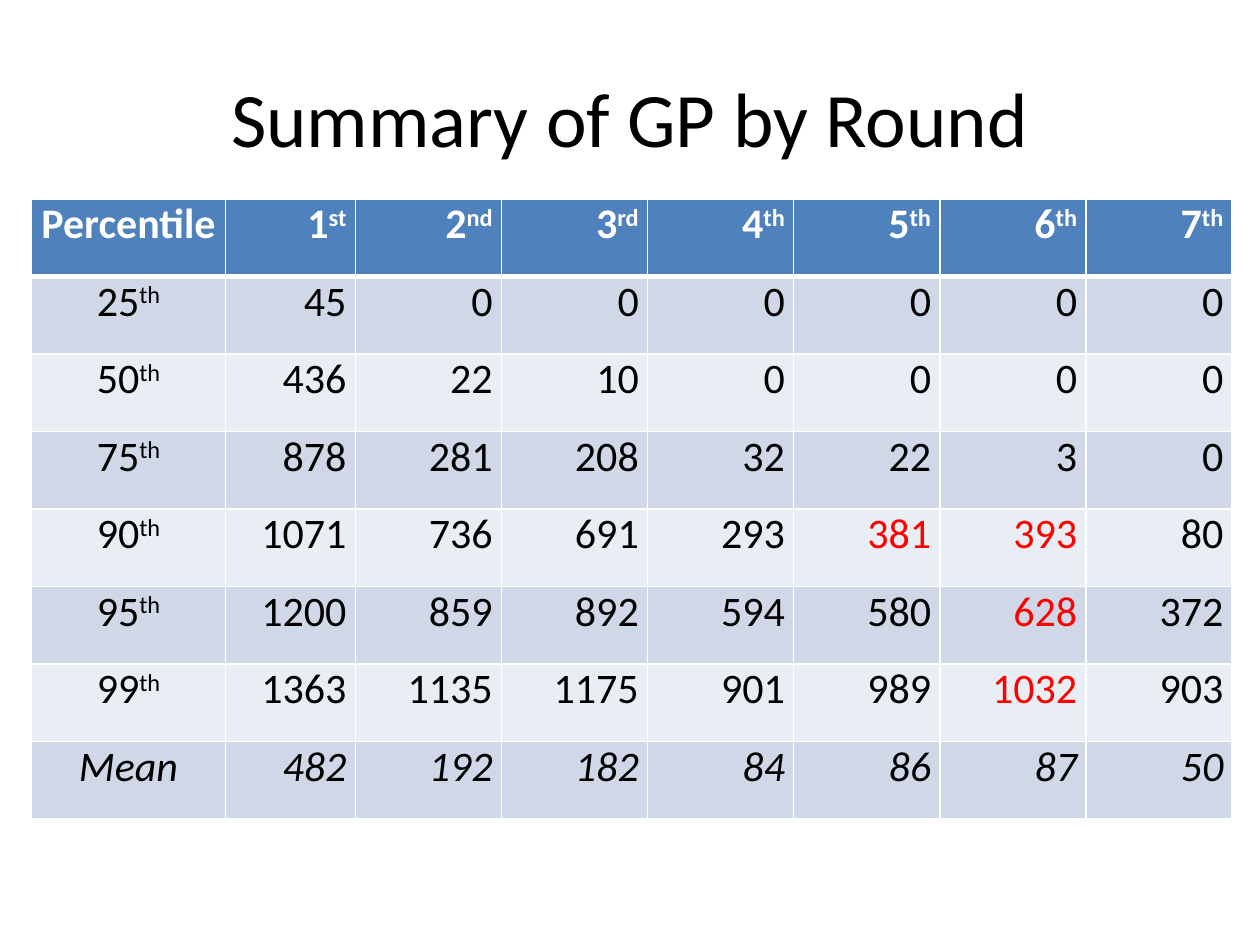
"""Build the slide that summarises GP by round in a percentile table."""
from lxml import etree
from pptx import Presentation
from pptx.dml.color import RGBColor
from pptx.enum.text import MSO_ANCHOR, PP_ALIGN
from pptx.oxml.ns import qn
from pptx.util import Inches, Pt

CENTER, RIGHT = PP_ALIGN.CENTER, PP_ALIGN.RIGHT
TOP, MIDDLE = MSO_ANCHOR.TOP, MSO_ANCHOR.MIDDLE
TITLE_ONLY = 5
COLORS = {
    "text": "000000", "white": "FFFFFF", "header": "4F81BD",
    "dark_band": "D0D8E8", "light_band": "E9EDF4", "highlight": "FF0000",
}
COLUMN_WIDTHS = [1.54, 1.03] + [1.16] * 6
ROWS = [
    ["Percentile", "1^st", "2^nd", "3^rd", "4^th", "5^th", "6^th", "7^th"],
    ["25^th", "45", "0", "0", "0", "0", "0", "0"],
    ["50^th", "436", "22", "10", "0", "0", "0", "0"],
    ["75^th", "878", "281", "208", "32", "22", "3", "0"],
    ["90^th", "1071", "736", "691", "293", "381", "393", "80"],
    ["95^th", "1200", "859", "892", "594", "580", "628", "372"],
    ["99^th", "1363", "1135", "1175", "901", "989", "1032", "903"],
    ["Mean", "482", "192", "182", "84", "86", "87", "50"],
]
HIGHLIGHTS = {(4, 5), (4, 6), (5, 6), (6, 6)}


class SlideBuilder:
    """Hold the text style and the current page."""

    def __init__(self, deck, font="Calibri"):
        self.page = deck.slides.add_slide(deck.slide_layouts[TITLE_ONLY])
        self.font = font

    def add_text(self, frame, text, align, color, **formats):
        para = frame.paragraphs[0]
        para.alignment = align
        for index, part in enumerate(text.split("^")):
            span = para.add_run()
            span.text = part
            span.font.color.rgb = RGBColor.from_string(COLORS[color])
            for name, value in {"name": self.font, **formats}.items():
                setattr(span.font, name, value)
            if index:
                span._r.get_or_add_rPr().set("baseline", "30000")

    def title(self, text, left, top, width, height):
        box = self.page.shapes.title
        box.left, box.top = Inches(left), Inches(top)
        box.width, box.height = Inches(width), Inches(height)
        box.text_frame.vertical_anchor = MIDDLE
        self.add_text(box.text_frame, text, CENTER, "text", size=Pt(44))

    def borders(self, cell, row):
        properties = cell._tc.get_or_add_tcPr()
        points = {"lnL": 1, "lnR": 1, "lnT": 3 if row == 1 else 1, "lnB": 3 if row == 0 else 1}
        for side, width in points.items():
            line = etree.SubElement(properties, qn(f"a:{side}"), w=str(Pt(width)))
            fill = etree.SubElement(line, qn("a:solidFill"))
            etree.SubElement(fill, qn("a:srgbClr"), val=COLORS["white"])

    def cell(self, cell, text, row, column):
        self.borders(cell, row)
        band = "header" if row == 0 else "dark_band" if row % 2 else "light_band"
        cell.fill.solid()
        cell.fill.fore_color.rgb = RGBColor.from_string(COLORS[band])
        layout = {"margin_left": Inches(0.07), "margin_right": Inches(0.07),
                  "margin_top": 0, "margin_bottom": 0, "vertical_anchor": TOP}
        for name, value in layout.items():
            setattr(cell, name, value)
        color = "white" if row == 0 else "highlight" if (row, column) in HIGHLIGHTS else "text"
        self.add_text(cell.text_frame, text, RIGHT if column else CENTER, color,
                      size=Pt(24), bold=row == 0, italic=row == len(ROWS) - 1)

    def table(self, rows, widths, left, top, width, height):
        table = self.page.shapes.add_table(
            len(rows), len(widths), Inches(left), Inches(top), Inches(width), Inches(height)
        ).table
        for column, column_width in zip(table.columns, widths):
            column.width = Inches(column_width)
        for row, texts in enumerate(rows):
            for column, text in enumerate(texts):
                self.cell(table.cell(row, column), text, row, column)


def main():
    deck = Presentation()
    deck.slide_width, deck.slide_height = Inches(10), Inches(7.5)
    builder = SlideBuilder(deck)
    builder.title("Summary of GP by Round", 0.5, 0.3, 9, 1.25)
    builder.table(ROWS, COLUMN_WIDTHS, 0.25, 1.58, 9.5, 4.92)
    deck.save("out.pptx")


if __name__ == "__main__":
    main()
